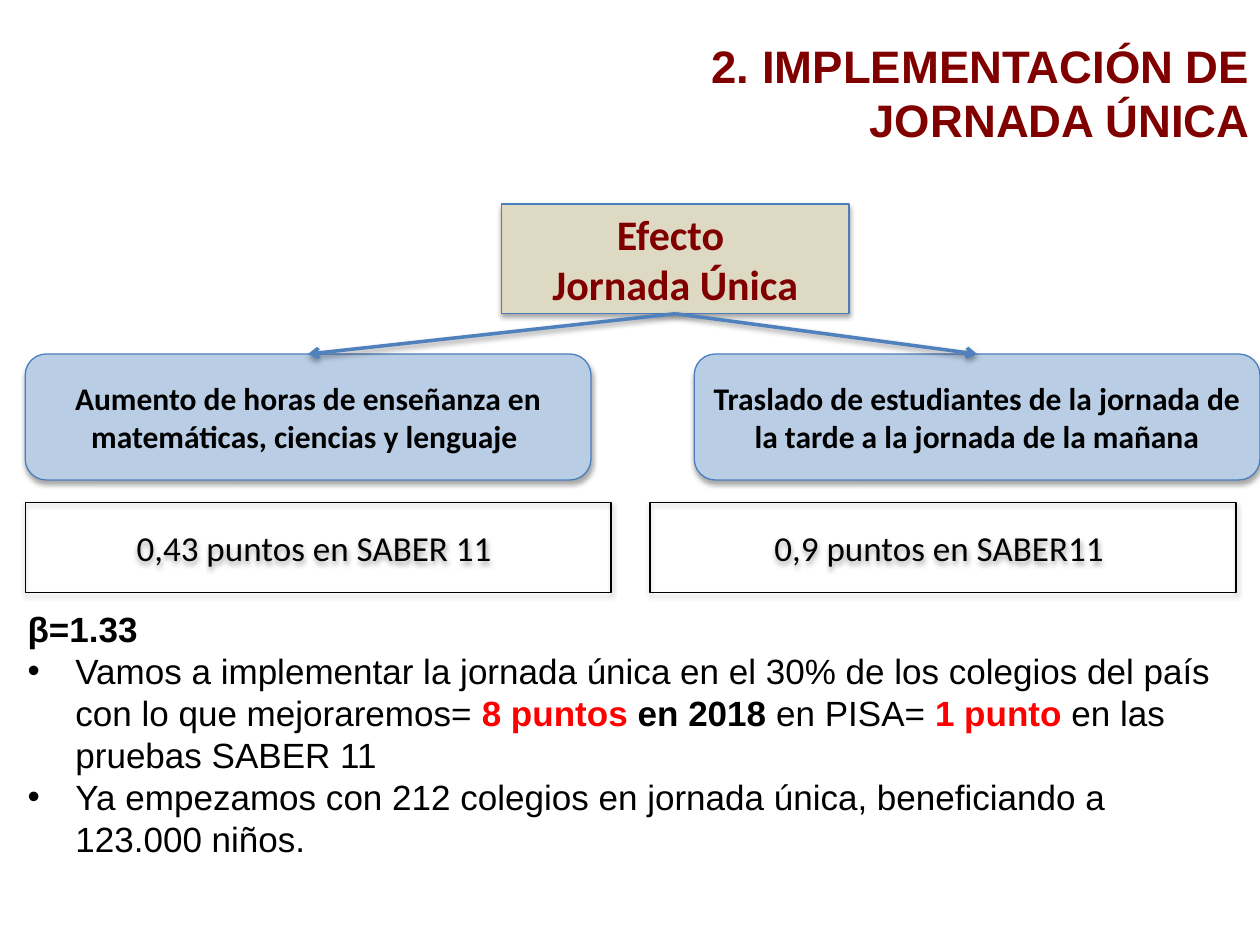
from dataclasses import dataclass

from lxml import etree
from pptx import Presentation
from pptx import util as u
from pptx.dml.color import RGBColor
from pptx.enum import shapes, text
from pptx.oxml import ns


@dataclass(frozen=True)
class Theme:
    maroon: str = "800000"
    sand: str = "DDD9C3"
    sky: str = "B9CDE5"
    outline: str = "4B7EBC"
    arrow: str = "4F81BD"
    black: str = "000000"
    red: str = "FF0000"
    heading_font: str = "Arial"
    diagram_font: str = "Calibri"
    title_size: int = 26
    effect_size: int = 24
    cause_size: int = 18
    body_size: int = 20


THEME = Theme()
BOTTOM, TOP = 2, 0


def color(value):
    return RGBColor.from_string(value)


def style_font(font, face, size, tone, bold=False):
    font.name = face
    font.size = u.Pt(size)
    font.color.rgb = color(tone)
    font.bold = bold


def add_shadow(effects, alpha, distance):
    shadow = etree.SubElement(
        effects, ns.qn("a:outerShdw"), blurRad=str(u.Pt(3.1)),
        dist=str(u.Pt(distance)), dir="5400000", rotWithShape="0")
    tone = etree.SubElement(shadow, ns.qn("a:srgbClr"), val=THEME.black)
    etree.SubElement(tone, ns.qn("a:alpha"), val=str(alpha * 1000))


def add_box(slide, preset, area, lines, size, tone, fill, outline, bold=True):
    box = slide.shapes.add_shape(preset, *map(u.Inches, area))
    if fill:
        box.fill.solid()
        box.fill.fore_color.rgb = color(fill)
    else:
        box.fill.background()
    box.line.color.rgb = color(outline)
    box.line.width = u.Pt(0.75)
    box.shadow.inherit = False
    add_shadow(box._element.spPr.find(ns.qn("a:effectLst")), 35, 1.8)
    frame = box.text_frame
    frame.word_wrap = True
    frame.vertical_anchor = text.MSO_ANCHOR.MIDDLE
    frame.text = "\n".join(lines)
    for paragraph in frame.paragraphs:
        paragraph.alignment = text.PP_ALIGN.CENTER
        style_font(paragraph.font, THEME.diagram_font, size, tone, bold)
    return box


def add_arrow(slide, effect, cause):
    arrow = slide.shapes.add_connector(shapes.MSO_CONNECTOR.STRAIGHT, 0, 0, 0, 0)
    arrow.begin_connect(effect, BOTTOM)
    arrow.end_connect(cause, TOP)
    arrow.line.color.rgb = color(THEME.arrow)
    arrow.line.width = u.Pt(2)
    properties = arrow._element.spPr
    etree.SubElement(properties.find(ns.qn("a:ln")), ns.qn("a:tailEnd"), type="arrow")
    add_shadow(etree.SubElement(properties, ns.qn("a:effectLst")), 38, 1.6)


def add_text_area(slide, area):
    frame = slide.shapes.add_textbox(*map(u.Inches, area)).text_frame
    frame.word_wrap = True
    return frame


def add_title(slide):
    title = add_text_area(slide, (5.02, 0.25, 5, 0.98)).paragraphs[0]
    title.text = "2. IMPLEMENTACIÓN DE JORNADA ÚNICA"
    title.alignment = text.PP_ALIGN.RIGHT
    style_font(title.font, THEME.heading_font, THEME.title_size, THEME.maroon, True)


def add_bullet(frame, pieces):
    paragraph = frame.add_paragraph()
    properties = paragraph._p.get_or_add_pPr()
    indent = u.Inches(0.38)
    properties.set("marL", str(indent))
    properties.set("indent", str(-indent))
    etree.SubElement(properties, ns.qn("a:buFont"), typeface=THEME.heading_font)
    etree.SubElement(properties, ns.qn("a:buChar"), char="•")
    style_font(paragraph.font, THEME.heading_font, THEME.body_size, THEME.black)
    for words, tone, bold in pieces:
        run = paragraph.add_run()
        run.text = words
        style_font(run.font, THEME.heading_font, THEME.body_size, tone, bold)


def add_goals(slide):
    goals = add_text_area(slide, (0.12, 4.77, 9.65, 2.12))
    beta = goals.paragraphs[0]
    beta.text = "β=1.33"
    style_font(beta.font, THEME.heading_font, THEME.body_size, THEME.black, True)
    add_bullet(goals, [
        ("Vamos a implementar la jornada única en el 30% de los colegios del país "
         "con lo que mejoraremos= ", THEME.black, False),
        ("8 puntos ", THEME.red, True),
        ("en 2018 ", THEME.black, True),
        ("en PISA= ", THEME.black, False),
        ("1 punto ", THEME.red, True),
        ("en las pruebas SABER 11", THEME.black, False),
    ])
    add_bullet(goals, [
        ("Ya empezamos con 212 colegios en jornada única, beneficiando a "
         "123.000 niños.", THEME.black, False),
    ])


def add_effect_tree(slide):
    preset = shapes.MSO_SHAPE
    effect = add_box(slide, preset.RECTANGLE, (3.98, 1.62, 2.76, 0.87),
                     ["Efecto ", "Jornada Única"], THEME.effect_size,
                     THEME.maroon, THEME.sand, THEME.outline)
    branches = [
        (0.2, "Aumento de horas de enseñanza en matemáticas, ciencias y lenguaje ",
         0.2, "0,43 puntos en SABER 11 "),
        (5.51, "Traslado de estudiantes de la jornada de la tarde a la jornada de la mañana",
         5.16, "0,9 puntos en SABER11 "),
    ]
    for cause_left, reason, gain_left, points in branches:
        cause = add_box(slide, preset.ROUNDED_RECTANGLE, (cause_left, 2.81, 4.49, 1),
                        [reason], THEME.cause_size, THEME.black, THEME.sky, THEME.outline)
        add_arrow(slide, effect, cause)
        add_box(slide, preset.RECTANGLE, (gain_left, 3.99, 4.65, 0.71), [points],
                THEME.body_size, THEME.black, None, THEME.black, bold=False)


def main():
    deck = Presentation()
    deck.slide_width, deck.slide_height = u.Inches(10), u.Inches(7.5)
    slide = deck.slides.add_slide(deck.slide_layouts[6])
    add_title(slide)
    add_effect_tree(slide)
    add_goals(slide)
    deck.save("out.pptx")


if __name__ == "__main__":
    main()
